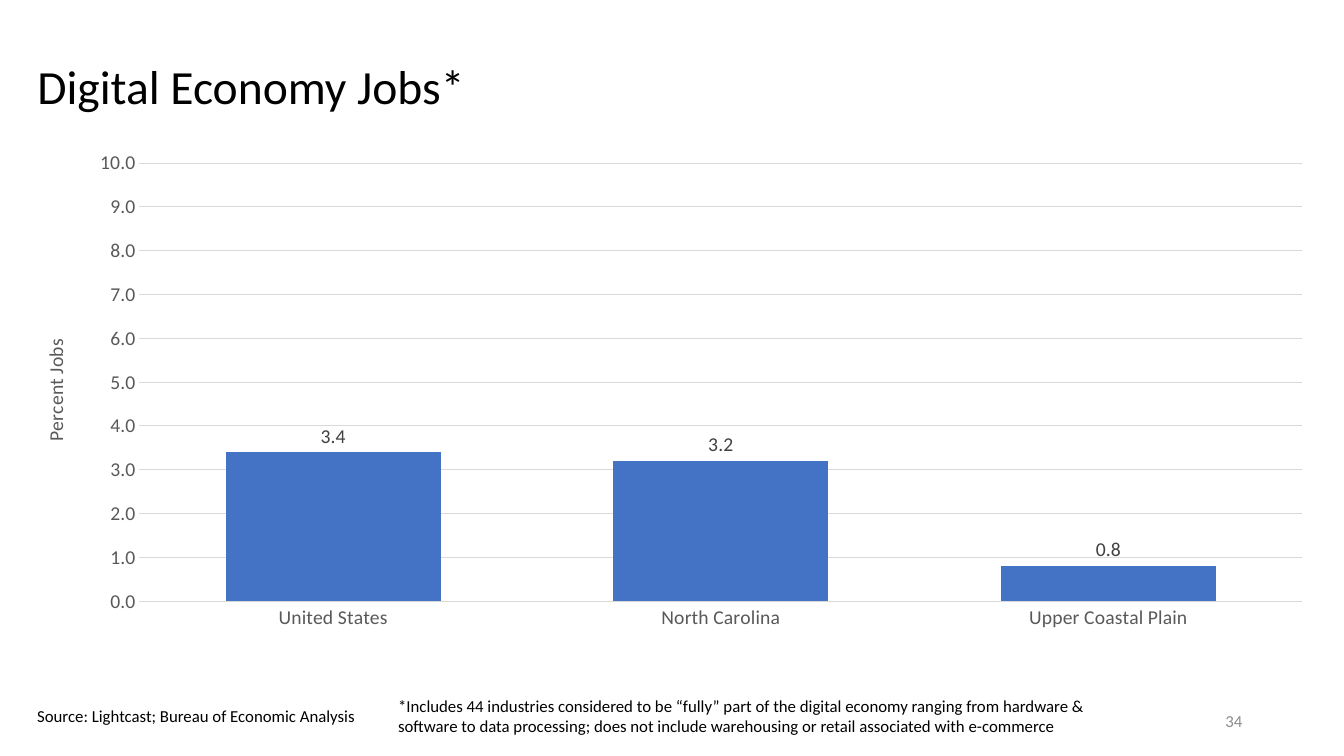
from dataclasses import dataclass

from lxml.etree import SubElement
from pptx import Presentation
from pptx.chart.data import CategoryChartData
from pptx.dml.color import RGBColor
from pptx.enum.chart import XL_CHART_TYPE as ChartType
from pptx.enum.chart import XL_LABEL_POSITION as LabelPosition
from pptx.enum.chart import XL_TICK_MARK as TickMark
from pptx.enum.text import MSO_ANCHOR as Anchor
from pptx.enum.text import PP_ALIGN as Align
from pptx.oxml.ns import qn
from pptx.util import Inches, Pt

FONT = "Calibri"
BLACK, GRAY, PALE_GRAY = "000000", "595959", "D9D9D9"
JOB_SHARES = {"United States": 3.4, "North Carolina": 3.2, "Upper Coastal Plain": 0.8}
PLOT_AREA = {"x": 0.087, "y": 0.035, "w": 0.901, "h": 0.805}


@dataclass
class Note:
    text: str
    left: float
    top: float
    width: float
    height: float
    color: str = BLACK
    align: Align = Align.LEFT
    anchor: Anchor = Anchor.TOP


NOTES = [
    Note("34", 9.42, 6.95, 3, 0.4, "8C8C8C", Align.RIGHT, Anchor.MIDDLE),
    Note("Source: Lightcast; Bureau of Economic Analysis", 0.27, 6.95, 3.37, 0.3),
    Note("*Includes 44 industries considered to be “fully” part of the digital economy "
         "ranging from hardware & software to data processing; does not include "
         "warehousing or retail associated with e-commerce", 3.85, 6.85, 7.07, 0.5),
]


def rgb(color: str) -> RGBColor:
    return RGBColor.from_string(color)


def style_font(font, size: float, color: str) -> None:
    font.name, font.size, font.bold = FONT, Pt(size), False
    font.color.rgb = rgb(color)


def style_line(line, color: str) -> None:
    line.color.rgb = rgb(color)
    line.width = Pt(0.75)


def add_span(para, text: str, size: float, color: str) -> None:
    span = para.add_run()
    span.text = text
    style_font(span.font, size, color)


def place_title(page) -> None:
    title = page.shapes.title
    title.left, title.top = Inches(0.27), Inches(0.34)
    title.width, title.height = Inches(12.76), Inches(1.09)
    title.text_frame.vertical_anchor = Anchor.MIDDLE
    para = title.text_frame.paragraphs[0]
    para.alignment = Align.LEFT
    para.line_spacing = 0.9
    add_span(para, "Digital Economy Jobs*", 34, BLACK)


def add_note(page, note: Note) -> None:
    box = page.shapes.add_textbox(Inches(note.left), Inches(note.top),
                                  Inches(note.width), Inches(note.height))
    box.text_frame.word_wrap = True
    box.text_frame.vertical_anchor = note.anchor
    para = box.text_frame.paragraphs[0]
    para.alignment = note.align
    add_span(para, note.text, 12, note.color)


def fix_plot_area(chart) -> None:
    """Pin the inner plot area to fractions of the chart frame."""
    plot_area = chart._chartSpace.chart.plotArea
    for old_layout in plot_area.findall(qn("c:layout")):
        plot_area.remove(old_layout)
    layout = SubElement(plot_area, qn("c:layout"))
    plot_area.insert(0, layout)
    manual = SubElement(layout, qn("c:manualLayout"))
    settings = {"layoutTarget": "inner", "xMode": "edge", "yMode": "edge", **PLOT_AREA}
    for name, value in settings.items():
        SubElement(manual, qn(f"c:{name}")).set("val", str(value))


def style_axes(chart) -> None:
    for axis in (chart.category_axis, chart.value_axis):
        axis.major_tick_mark = axis.minor_tick_mark = TickMark.NONE
        style_font(axis.tick_labels.font, 14, GRAY)
    style_line(chart.category_axis.format.line, PALE_GRAY)

    percent = chart.value_axis
    percent.format.line.fill.background()
    percent.minimum_scale, percent.maximum_scale, percent.major_unit = 0, 10, 1
    percent.tick_labels.number_format = "0.0"
    percent.tick_labels.number_format_is_linked = False
    style_line(percent.major_gridlines.format.line, PALE_GRAY)
    frame = percent.axis_title.text_frame
    frame._txBody.bodyPr.set("rot", "-5400000")
    frame._txBody.bodyPr.set("vert", "horz")
    add_span(frame.paragraphs[0], "Percent Jobs", 14, GRAY)


def add_jobs_chart(page) -> None:
    data = CategoryChartData(number_format="0.0")
    data.categories = list(JOB_SHARES)
    data.add_series("Series 1", list(JOB_SHARES.values()))
    chart = page.shapes.add_chart(ChartType.COLUMN_CLUSTERED, Inches(0.27), Inches(1.43),
                                  Inches(12.8), Inches(5.4), data).chart
    chart.has_title = chart.has_legend = False
    style_font(chart.font, 14, BLACK)
    fix_plot_area(chart)
    style_axes(chart)

    plot = chart.plots[0]
    plot.gap_width = 80
    plot.vary_by_categories = False
    bars = plot.series[0]
    bars.format.fill.solid()
    bars.format.fill.fore_color.rgb = rgb("4472C4")
    labels = bars.data_labels
    labels.show_value = True
    labels.position = LabelPosition.OUTSIDE_END
    labels.number_format = "0.0"
    labels.number_format_is_linked = False
    style_font(labels.font, 14, "404040")


def main() -> None:
    deck = Presentation()
    deck.slide_width, deck.slide_height = Inches(13.33), Inches(7.5)
    page = deck.slides.add_slide(deck.slide_layouts.get_by_name("Title Only"))
    place_title(page)
    add_jobs_chart(page)
    for note in NOTES:
        add_note(page, note)
    deck.save("out.pptx")


if __name__ == "__main__":
    main()
